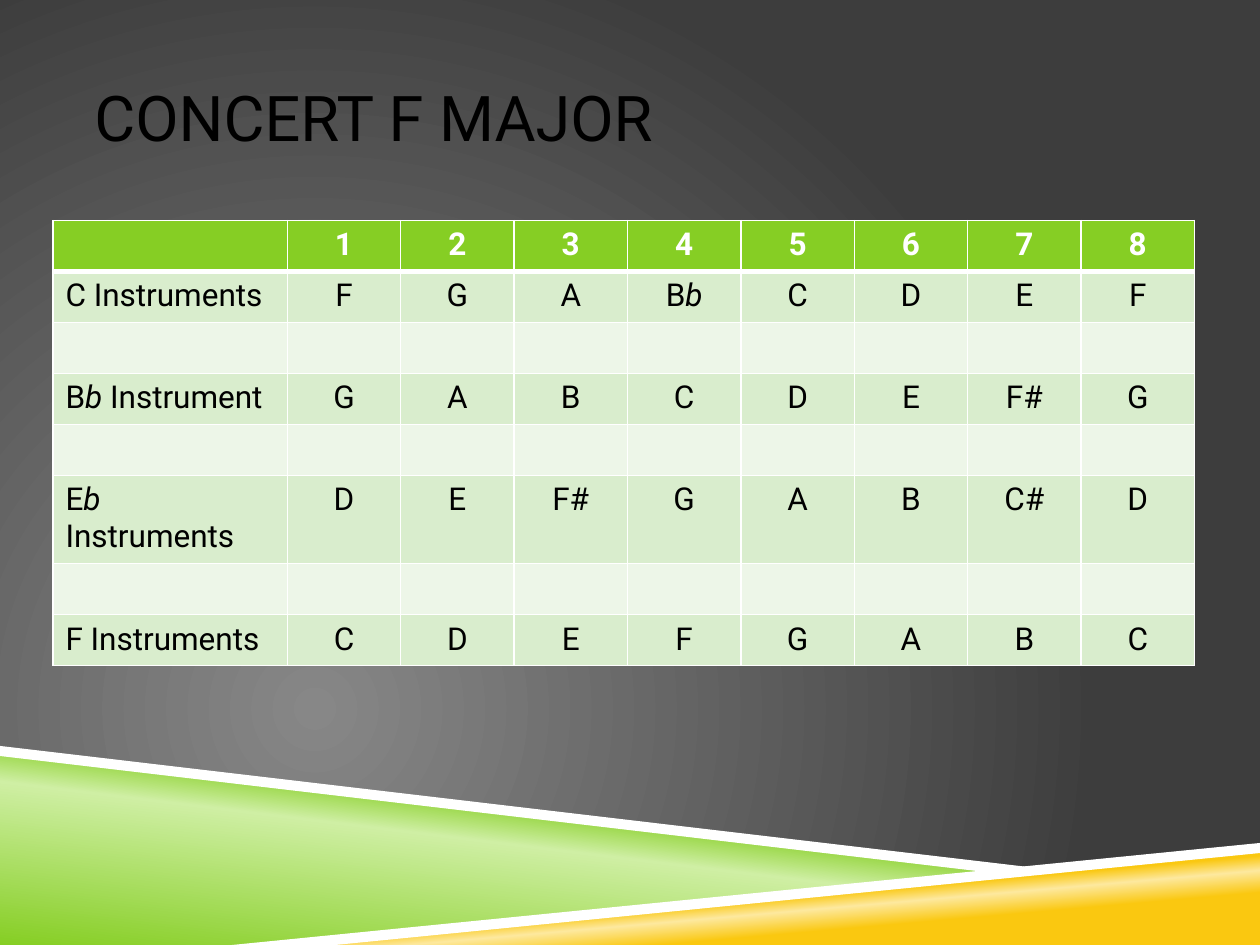
from lxml import etree
from pptx import Presentation
from pptx.dml.color import RGBColor
from pptx.enum.text import MSO_ANCHOR, PP_ALIGN
from pptx.oxml.ns import qn
from pptx.util import Inches, Pt

CENTER, LEFT = PP_ALIGN.CENTER, PP_ALIGN.LEFT
MIDDLE = MSO_ANCHOR.MIDDLE
rgb = RGBColor.from_string
WHITE, GREEN = "FFFFFF", "86CE24"


def shade(props, stops):
    """Swap the solid fill in props for a gradient and return it."""
    grad = etree.Element(qn("a:gradFill"), rotWithShape="1")
    gs_list = etree.SubElement(grad, qn("a:gsLst"))
    for pos, color in stops:
        stop = etree.SubElement(gs_list, qn("a:gs"), pos=str(pos * 1000))
        etree.SubElement(stop, qn("a:srgbClr"), val=color)
    props.replace(props.find(qn("a:solidFill")), grad)
    return grad


def write(para, text, style):
    """Add runs to para; parts between asterisks are italic."""
    for i, part in enumerate(text.split("*")):
        if part:
            run = para.add_run()
            run.text = part
            for name, value in style.items():
                setattr(run.font, name, value)
            run.font.italic = i % 2 == 1
            run.font.color.rgb = rgb(WHITE if para in white else "000000")


prs = Presentation()
prs.slide_width, prs.slide_height = Inches(10), Inches(7.5)
slide = prs.slides.add_slide(prs.slide_layouts[6])
white = []

# Background: radial glow from the lower left
slide.background.fill.solid()
slide.background.fill.fore_color.rgb = rgb("3D3D3D")
back = slide.element.find(".//" + qn("p:bgPr"))
glow = shade(back, [(0, "878787"), (100, "3D3D3D")])
ring = etree.SubElement(glow, qn("a:path"), path="circle")
etree.SubElement(ring, qn("a:fillToRect"), l="50000", t="100000",
                 r="100000", b="50000")

# Wedges and white stripes along the bottom: points, colour, stops, angle
wedges = [
    ([(0, 5.97), (7.92, 6.92), (2, 7.5), (0, 7.5)], GREEN,
     [(0, GREEN), (52, "CFEFA4"), (66, GREEN)], 277),
    ([(1.98, 7.5), (10, 6.72), (10, 7.5)], "FAC810",
     [(28, "FAC810"), (40, "FDE99F"), (48, "FAC810")], 265),
    ([(0, 5.92), (0, 6), (7.9, 6.93), (8.32, 6.9)], WHITE, None, None),
    ([(10, 6.69), (1.84, 7.5), (2.66, 7.5), (10, 6.77)], WHITE, None, None),
]
for points, color, stops, angle in wedges:
    dots = [(Inches(x), Inches(y)) for x, y in points]
    path = slide.shapes.build_freeform(*dots[0])
    path.add_line_segments(dots[1:], close=True)
    wedge = path.convert_to_shape()
    wedge.shadow.inherit = False
    wedge.line.fill.background()
    wedge.fill.solid()
    wedge.fill.fore_color.rgb = rgb(color)
    if stops:
        grad = shade(wedge.element.spPr, stops)
        etree.SubElement(grad, qn("a:lin"), ang=str(angle * 60000), scaled="0")

# Title
frame = slide.shapes.add_textbox(Inches(0.75), Inches(0.3), Inches(8.5),
                                 Inches(1.25)).text_frame
layout = {"word_wrap": True, "vertical_anchor": MIDDLE,
          "margin_left": 0, "margin_right": 0}
for name, value in layout.items():
    setattr(frame, name, value)
white.append(frame.paragraphs[0])
write(frame.paragraphs[0], "CONCERT F MAJOR", {"name": "Roboto", "size": Pt(36)})

# Scale table: one row for each group, with empty rows between
blank = [""] * 9
rows = [
    ["", *"12345678"],
    ["C Instruments", "F", "G", "A", "B*b*", "C", "D", "E", "F"],
    blank,
    ["B*b *Instrument", "G", "A", "B", "C", "D", "E", "F#", "G"],
    blank,
    ["E*b* Instruments", "D", "E", "F#", "G", "A", "B", "C#", "D"],
    blank,
    ["F Instruments", *"CDEFGABC"],
]
table = slide.shapes.add_table(8, 9, Inches(0.42), Inches(1.75), Inches(9.06),
                               Inches(3.24)).table
for i, col in enumerate(table.columns):
    col.width = Inches(0.9 if i else 1.86)

for r, row in enumerate(rows):
    for c, text in enumerate(row):
        cell = table.cell(r, c)
        props = cell._tc.get_or_add_tcPr()
        for side in "LRTB":
            thick = (r, side) in [(0, "B"), (1, "T")]
            edge = etree.SubElement(props, qn("a:ln" + side),
                                    w=str(Pt(3 if thick else 1)))
            paint = etree.SubElement(edge, qn("a:solidFill"))
            etree.SubElement(paint, qn("a:srgbClr"), val=WHITE)
        cell.fill.solid()
        band = "D9EDCD" if r % 2 else "EDF6E8"
        cell.fill.fore_color.rgb = rgb(band if r else GREEN)
        para = cell.text_frame.paragraphs[0]
        para.alignment = CENTER if c else LEFT
        if r == 0:
            white.append(para)
        write(para, text, {"name": "Roboto", "size": Pt(18), "bold": r == 0})

prs.save("out.pptx")
